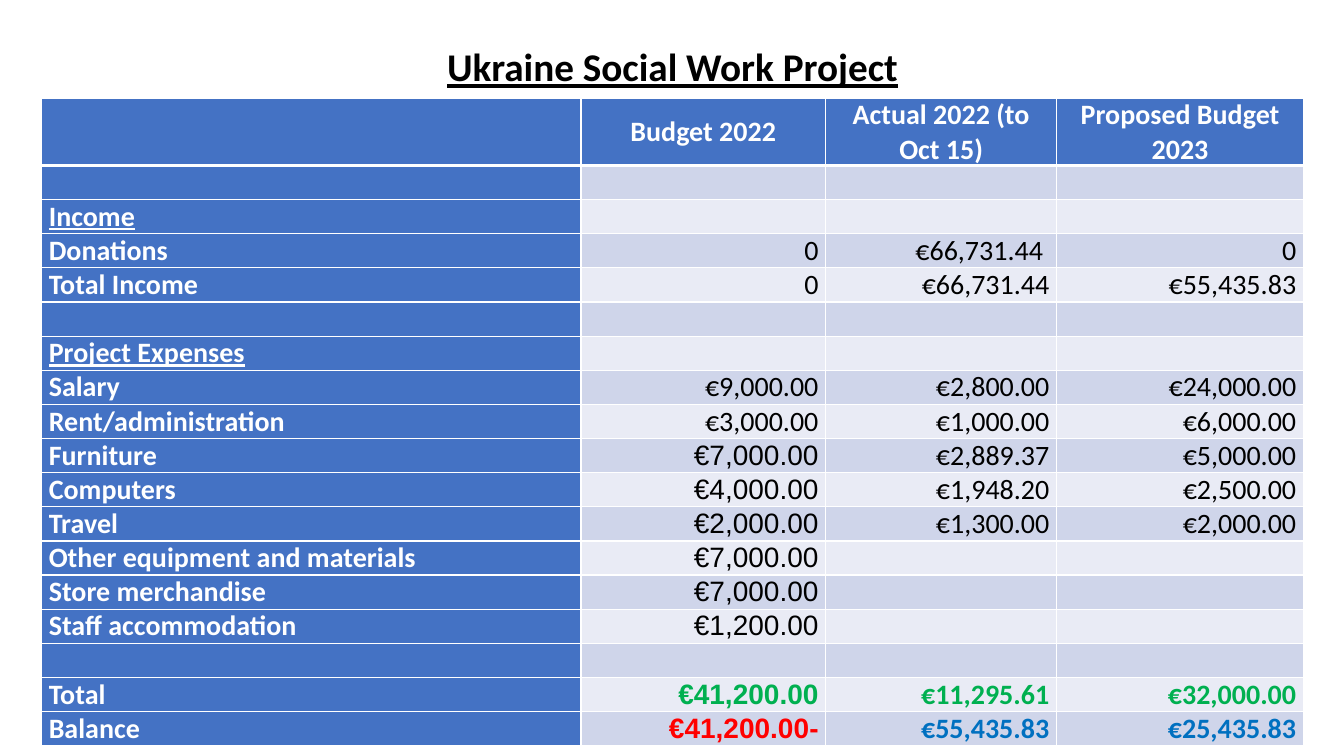
from lxml import etree
from pptx import Presentation
from pptx.dml.color import RGBColor
from pptx.enum.text import MSO_ANCHOR, PP_ALIGN
from pptx.oxml.ns import qn
from pptx.util import Cm, Pt

CENTER, LEFT, RIGHT, JUSTIFY = PP_ALIGN.CENTER, PP_ALIGN.LEFT, PP_ALIGN.RIGHT, PP_ALIGN.JUSTIFY
MIDDLE = MSO_ANCHOR.MIDDLE

FONT, SCRIPT_FONT = "Calibri", "Arial"
WHITE, BLACK, BLUE = "FFFFFF", "000000", "4472C4"
BANDS = ("E9EBF5", "CFD5EA")
GREEN, RED, SKY = "00B050", "FF0000", "0070C0"

COLUMN_WIDTHS = (13.59, 6.17, 5.82, 6.22)
HEADER_HEIGHT, ROW_HEIGHT = 1.7, 0.86
EMPTY_ROW = ("", "", "", "")
BUDGET = (
    ("", "Budget 2022", "Actual 2022 (to Oct 15)", "Proposed Budget 2023"),
    EMPTY_ROW,
    ("Income", "", "", ""),
    ("Donations", "0", "€66,731.44 ", "0"),
    ("Total Income", "0", "€66,731.44", "€55,435.83"),
    EMPTY_ROW,
    ("Project Expenses", "", "", ""),
    ("Salary", "€9,000.00", "€2,800.00", "€24,000.00"),
    ("Rent/administration", "€3,000.00", "€1,000.00", "€6,000.00"),
    ("Furniture", "€7,000.00", "€2,889.37", "€5,000.00"),
    ("Computers", "€4,000.00", "€1,948.20", "€2,500.00"),
    ("Travel", "€2,000.00", "€1,300.00", "€2,000.00"),
    ("Other equipment and materials", "€7,000.00", "", ""),
    ("Store merchandise", "€7,000.00", "", ""),
    ("Staff accommodation", "€1,200.00", "", ""),
    EMPTY_ROW,
    ("Total", "€41,200.00", "€11,295.61", "€32,000.00"),
    ("Balance", "-€41,200.00", "€55,435.83", "€25,435.83"),
)
SECTION_HEADINGS = ("Income", "Project Expenses")
RESULT_COLORS = {"Total": (GREEN, GREEN, GREEN), "Balance": (RED, SKY, SKY)}
RTL_LABELS = [row[0] for row in BUDGET[9:]]


def rgb(color):
    return RGBColor.from_string(color)


def add_run(paragraph, text, size, color, bold=False, underline=False):
    run = paragraph.add_run()
    run.text = text
    font = run.font
    font.name, font.size = FONT, Pt(size)
    font.bold, font.underline = bold, underline
    font.color.rgb = rgb(color)
    return run


def set_right_to_left(paragraph, run):
    """Lay the paragraph out right to left, with a complex-script font."""
    paragraph.alignment = JUSTIFY
    paragraph._p.get_or_add_pPr().set("rtl", "1")
    script = etree.SubElement(run._r.get_or_add_rPr(), qn("a:cs"))
    script.set("typeface", SCRIPT_FONT)


def set_borders(cell, top, bottom):
    """Draw white borders; top and bottom are widths in points."""
    properties = cell._tc.get_or_add_tcPr()
    for side, width in (("L", 1), ("R", 1), ("T", top), ("B", bottom)):
        line = etree.SubElement(properties, qn(f"a:ln{side}"), w=str(Pt(width)))
        fill = etree.SubElement(line, qn("a:solidFill"))
        etree.SubElement(fill, qn("a:srgbClr"), val=WHITE)


def add_title(slide, text):
    box = slide.shapes.add_textbox(Cm(2.34), Cm(1.02), Cm(29.21), Cm(1.45))
    frame = box.text_frame
    frame.word_wrap = True
    frame.vertical_anchor = MIDDLE
    paragraph = frame.paragraphs[0]
    paragraph.alignment = CENTER
    paragraph.line_spacing = 0.9
    add_run(paragraph, text, 28, BLACK, bold=True, underline=True)


def fill_cell(cell, row, column):
    label, text = BUDGET[row][0], BUDGET[row][column]
    is_header, is_label = row == 0, column == 0
    set_borders(cell, top=3 if row == 1 else 1, bottom=3 if is_header else 1)
    cell.fill.solid()
    cell.fill.fore_color.rgb = rgb(BLUE if is_header or is_label else BANDS[row % 2])
    cell.vertical_anchor = MIDDLE
    cell.margin_left = cell.margin_right = Cm(0.18)
    cell.margin_top = cell.margin_bottom = 0
    if not text:
        return

    paragraph = cell.text_frame.paragraphs[0]
    if is_header or is_label:
        paragraph.alignment = CENTER if is_header else LEFT
        add_run(paragraph, text, 20, WHITE, bold=True, underline=text in SECTION_HEADINGS)
        return
    is_result = label in RESULT_COLORS
    color = RESULT_COLORS[label][column - 1] if is_result else BLACK
    paragraph.alignment = RIGHT
    amount = add_run(paragraph, text, 20, color, bold=is_result)
    if column == 1 and label in RTL_LABELS:
        set_right_to_left(paragraph, amount)


def add_budget_table(slide):
    height = HEADER_HEIGHT + ROW_HEIGHT * (len(BUDGET) - 1)
    table = slide.shapes.add_table(
        len(BUDGET), len(COLUMN_WIDTHS),
        Cm(1.05), Cm(2.47), Cm(sum(COLUMN_WIDTHS)), Cm(height)).table
    for column, width in zip(table.columns, COLUMN_WIDTHS):
        column.width = Cm(width)
    for index, row in enumerate(table.rows):
        row.height = Cm(ROW_HEIGHT if index else HEADER_HEIGHT)
        for column, cell in enumerate(row.cells):
            fill_cell(cell, index, column)


def main():
    presentation = Presentation()
    presentation.slide_width, presentation.slide_height = Cm(33.87), Cm(19.05)
    slide = presentation.slides.add_slide(presentation.slide_layouts[6])
    add_title(slide, "Ukraine Social Work Project")
    add_budget_table(slide)
    presentation.save("out.pptx")


if __name__ == "__main__":
    main()
